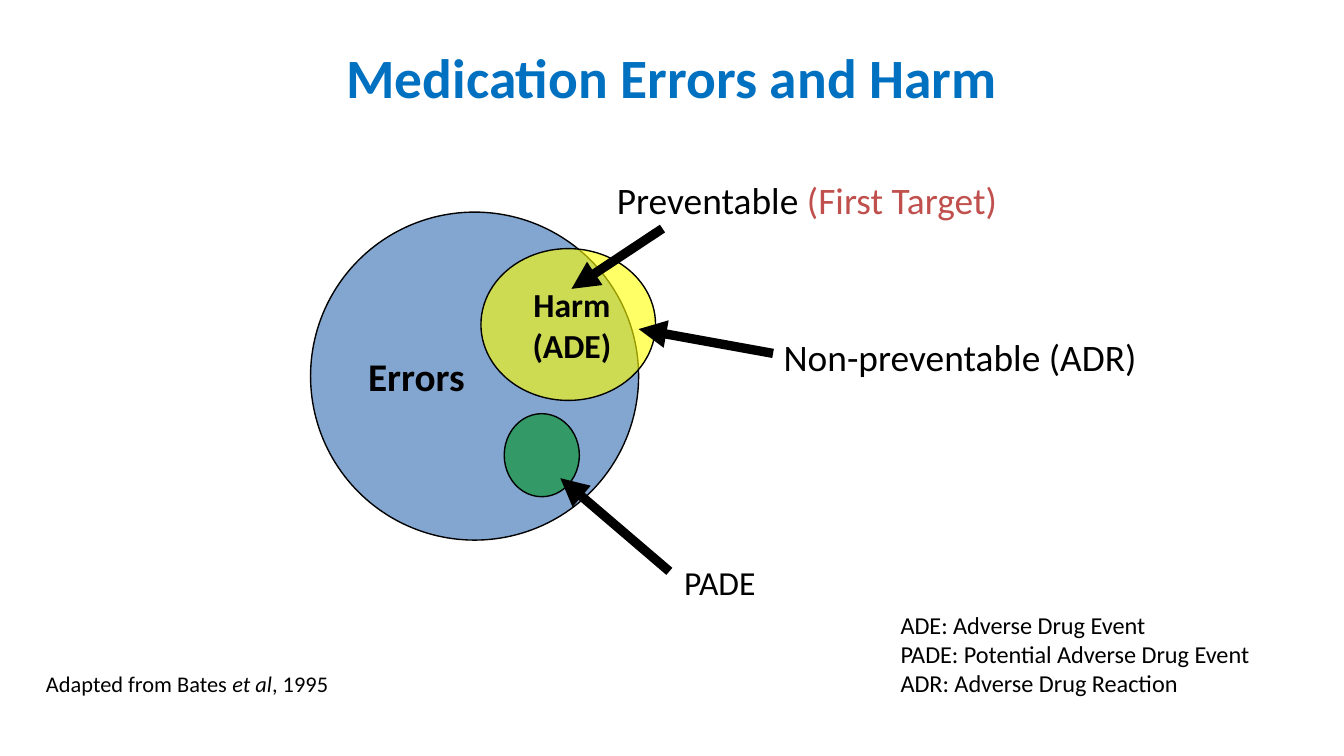
import pptx
import pptx.dml.color
import pptx.enum.shapes
import pptx.enum.text
import pptx.oxml
import pptx.oxml.ns
import pptx.util
from pptx.util import Cm, Pt

FONT = "Calibri"
BLACK = "000000"
TITLE_BLUE = "0070C0"
TARGET_RED = "C0504D"
ALIGN = pptx.enum.text.PP_ALIGN
ANCHOR = pptx.enum.text.MSO_ANCHOR
AUTO_SIZE = pptx.enum.text.MSO_AUTO_SIZE


def color(hex_value):
    return pptx.dml.color.RGBColor.from_string(hex_value)


def add_xml(parent, tag, **attributes):
    element = pptx.oxml.parse_xml(f"<a:{tag} {pptx.oxml.ns.nsdecls('a')}/>")
    for name, value in attributes.items():
        element.set(name, str(value))
    parent.append(element)


def format_paragraph(paragraph, size, bold=False, hex_value=BLACK, align=ALIGN.LEFT):
    paragraph.alignment = align
    paragraph.font.name = FONT
    paragraph.font.size = Pt(size)
    paragraph.font.bold = bold
    paragraph.font.color.rgb = color(hex_value)


def set_margins(frame, left=0.18):
    frame.margin_left = Cm(left)
    frame.margin_right = Cm(0.18)
    frame.margin_top = frame.margin_bottom = Cm(0.1)


def set_title(slide, text):
    title = slide.shapes.title
    title.left, title.top, title.width, title.height = Cm(1.27), Cm(0.66), Cm(22.86), Cm(1.57)
    frame = title.text_frame
    frame.text = text
    frame.auto_size = AUTO_SIZE.NONE
    frame.vertical_anchor = ANCHOR.MIDDLE
    format_paragraph(frame.paragraphs[0], 29.7, True, TITLE_BLUE, ALIGN.CENTER)


def add_circle(slide, left, top, width, height, fill, opacity=100):
    """Add an outlined ellipse; opacity is in percent."""
    circle = slide.shapes.add_shape(pptx.enum.shapes.MSO_SHAPE.OVAL,
                                    Cm(left), Cm(top), Cm(width), Cm(height))
    circle.shadow.inherit = False
    circle.fill.solid()
    circle.fill.fore_color.rgb = color(fill)
    if opacity < 100:
        fill_color = circle._element.spPr.find(".//" + pptx.oxml.ns.qn("a:srgbClr"))
        add_xml(fill_color, "alpha", val=opacity * 1000)
    circle.line.color.rgb = color(BLACK)
    circle.line.width = Pt(0.75)
    return circle


def write_in_circle(circle, lines, size, align=ALIGN.LEFT, left_margin=0.18):
    frame = circle.text_frame
    set_margins(frame, left_margin)
    frame.word_wrap = False
    frame.vertical_anchor = ANCHOR.MIDDLE
    frame.text = "\n".join(lines)
    for paragraph in frame.paragraphs:
        format_paragraph(paragraph, size, True, align=align)


def add_label(slide, left, top, width, height, text, size, wrap=False):
    """Add a plain text box and return its paragraphs."""
    box = slide.shapes.add_textbox(Cm(left), Cm(top), Cm(width), Cm(height))
    frame = box.text_frame
    set_margins(frame)
    frame.word_wrap = wrap
    frame.auto_size = AUTO_SIZE.SHAPE_TO_FIT_TEXT
    frame.text = text
    for paragraph in frame.paragraphs:
        format_paragraph(paragraph, size)
    return frame.paragraphs


def add_run(paragraph, text):
    run = paragraph.add_run()
    run.text = text
    return run


def add_arrow(slide, start, end):
    arrow = slide.shapes.add_connector(pptx.enum.shapes.MSO_CONNECTOR.STRAIGHT,
                                       *map(Cm, start + end))
    arrow.line.color.rgb = color(BLACK)
    arrow.line.width = Pt(5)
    add_xml(arrow.line._get_or_add_ln(), "tailEnd", type="triangle")
    add_xml(arrow._element.spPr, "effectLst")


def main():
    presentation = pptx.Presentation()
    presentation.slide_width, presentation.slide_height = Cm(25.4), Cm(14.29)
    slide = presentation.slides.add_slide(presentation.slide_layouts[5])
    set_title(slide, "Medication Errors and Harm")

    errors = add_circle(slide, 5.87, 4.01, 6.2, 6.2, "4F81BD", 70)
    write_in_circle(errors, ["Errors"], 21)
    harm = add_circle(slide, 9.09, 4.7, 3.3, 2.87, "FFFF00", 60)
    write_in_circle(harm, ["Harm", "(ADE)"], 18, ALIGN.CENTER, left_margin=0.32)
    add_circle(slide, 9.53, 7.82, 1.42, 1.57, "339966")

    add_arrow(slide, (12.65, 10.8), (10.59, 9.04))
    add_arrow(slide, (12.52, 4.32), (10.8, 5.46))
    add_arrow(slide, (14.61, 6.68), (12.07, 6.22))

    preventable = add_label(slide, 11.48, 3.25, 7.82, 1.04, "Preventable ", 20)[0]
    add_run(preventable, "(First Target)").font.color.rgb = color(TARGET_RED)
    add_label(slide, 14.63, 6.22, 7.16, 1.04, "Non-preventable (ADR)", 20, wrap=True)
    add_label(slide, 12.75, 10.52, 2.54, 0.97, "PADE", 18, wrap=True)

    abbreviations = ["ADE: Adverse Drug Event",
                     "PADE: Potential Adverse Drug Event",
                     "ADR: Adverse Drug Reaction"]
    add_label(slide, 16.84, 11.43, 7.09, 1.85, "\n".join(abbreviations), 13)
    credit = add_label(slide, 0.69, 12.57, 5.77, 0.71, "Adapted from Bates ", 12)[0]
    add_run(credit, "et al").font.italic = True
    add_run(credit, ", 1995")

    presentation.save("out.pptx")


if __name__ == "__main__":
    main()
